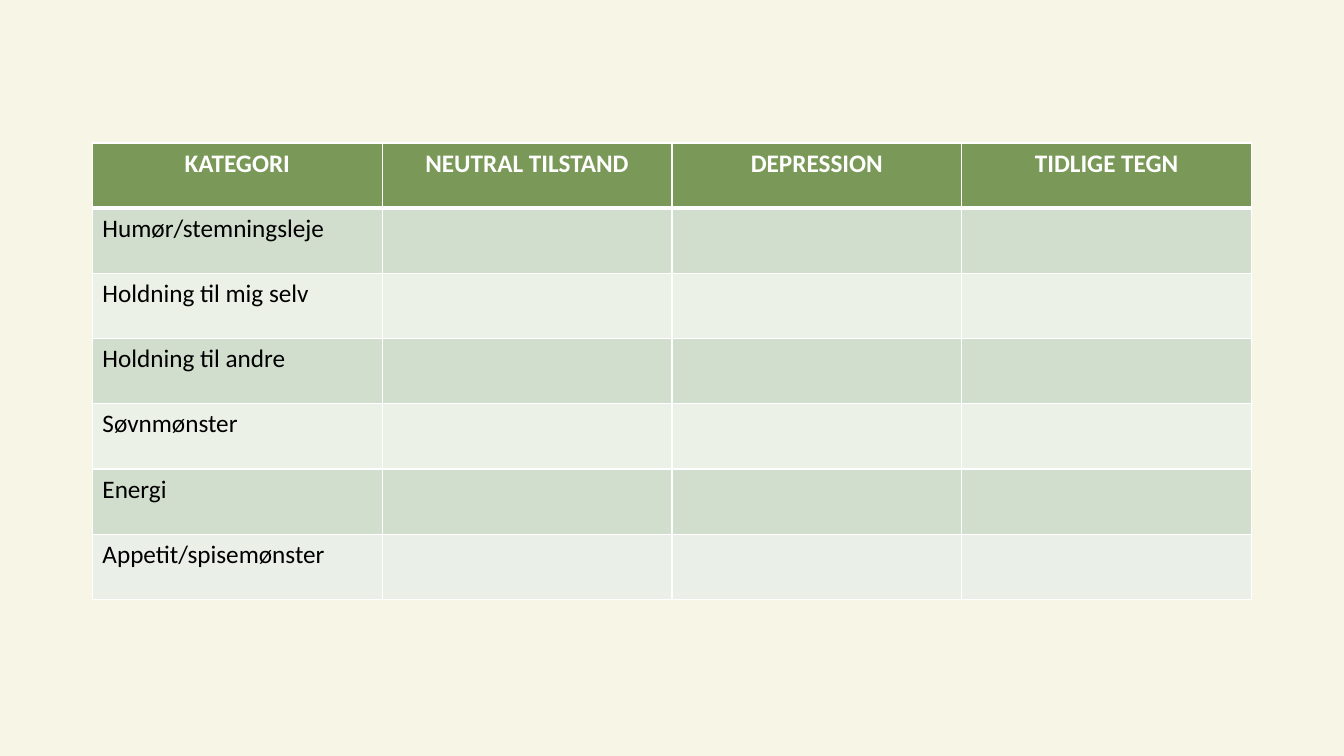
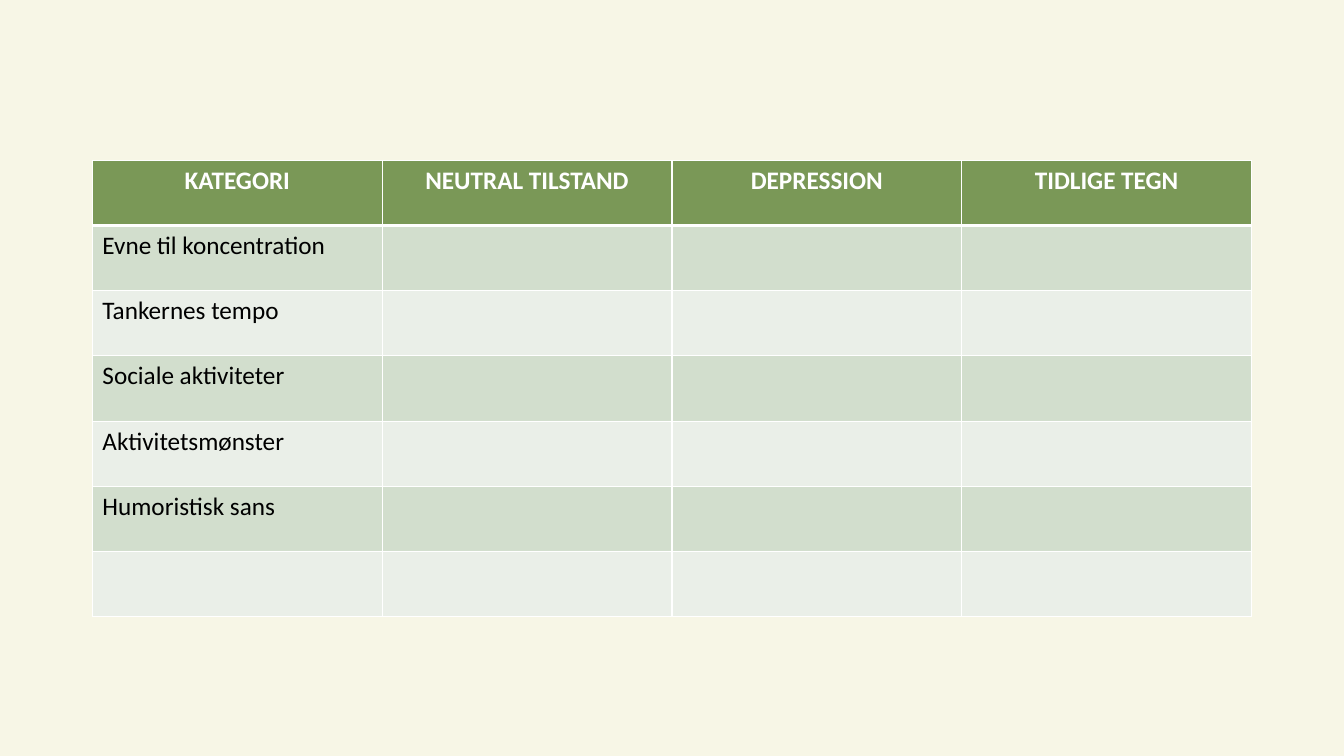
from lxml.etree import SubElement
from pptx import Presentation
from pptx.dml.color import RGBColor
from pptx.enum.text import PP_ALIGN
from pptx.oxml.ns import qn
from pptx.util import Pt

CREAM = RGBColor(0xF7, 0xF6, 0xE6)
GREEN = RGBColor(0x7A, 0x98, 0x57)
SAGE = RGBColor(0xD2, 0xDE, 0xCD)
PALE = RGBColor(0xEC, 0xF1, 0xE7)
MIST = RGBColor(0xEA, 0xEF, 0xE8)
WHITE = RGBColor(0xFF, 0xFF, 0xFF)
BLACK = RGBColor(0x00, 0x00, 0x00)

FONT = "Calibri"
TABLE_LEFT, TABLE_WIDTH, TABLE_HEIGHT = 66, 828, 326.2
HEADINGS = ["KATEGORI", "NEUTRAL TILSTAND", "DEPRESSION", "TIDLIGE TEGN"]
MOOD_ROWS = [
    ("Humør/stemningsleje", SAGE),
    ("Holdning til mig selv", PALE),
    ("Holdning til andre", SAGE),
    ("Søvnmønster", PALE),
    ("Energi", SAGE),
    ("Appetit/spisemønster", MIST),
]
ACTIVITY_ROWS = [
    ("Evne til koncentration", SAGE),
    ("Tankernes tempo", MIST),
    ("Sociale aktiviteter", SAGE),
    ("Aktivitetsmønster", MIST),
    ("Humoristisk sans", SAGE),
    ("", MIST),
]


def set_borders(cell, top, bottom):
    properties = cell._tc.get_or_add_tcPr()
    for side, width in (("L", 1), ("R", 1), ("T", top), ("B", bottom)):
        line = SubElement(properties, qn(f"a:ln{side}"), w=str(Pt(width)))
        fill = SubElement(line, qn("a:solidFill"))
        SubElement(fill, qn("a:srgbClr"), val=str(WHITE))


def style_cell(cell, text, color, is_header):
    cell.fill.solid()
    cell.fill.fore_color.rgb = color
    paragraph = cell.text_frame.paragraphs[0]
    paragraph.alignment = PP_ALIGN.CENTER if is_header else PP_ALIGN.LEFT
    paragraph.font.size = Pt(18)
    if text:
        run = paragraph.add_run()
        run.text = text
        run.font.name = FONT
        run.font.size = Pt(18)
        run.font.bold = is_header
        run.font.color.rgb = WHITE if is_header else BLACK


def add_category_table(slide, left, top, width, height, categories):
    rows = [(HEADINGS, GREEN)]
    rows += [([name] + [""] * (len(HEADINGS) - 1), color) for name, color in categories]
    table = slide.shapes.add_table(
        len(rows), len(HEADINGS), Pt(left), Pt(top), Pt(width), Pt(height)
    ).table
    for column in table.columns:
        column.width = Pt(width / len(HEADINGS))
    for row_index, (texts, color) in enumerate(rows):
        table.rows[row_index].height = Pt(height / len(rows))
        for column_index, text in enumerate(texts):
            cell = table.cell(row_index, column_index)
            set_borders(
                cell,
                top=3 if row_index == 1 else 1,
                bottom=3 if row_index == 0 else 1,
            )
            style_cell(cell, text, color, is_header=row_index == 0)


def add_category_slide(presentation, top, categories):
    slide = presentation.slides.add_slide(presentation.slide_layouts[6])
    add_category_table(slide, TABLE_LEFT, top, TABLE_WIDTH, TABLE_HEIGHT, categories)


def main():
    presentation = Presentation()
    presentation.slide_width = Pt(960)
    presentation.slide_height = Pt(540)
    background = presentation.slide_master.background.fill
    background.solid()
    background.fore_color.rgb = CREAM
    add_category_slide(presentation, 102.2, MOOD_ROWS)
    add_category_slide(presentation, 114.5, ACTIVITY_ROWS)
    presentation.save("out.pptx")


if __name__ == "__main__":
    main()
